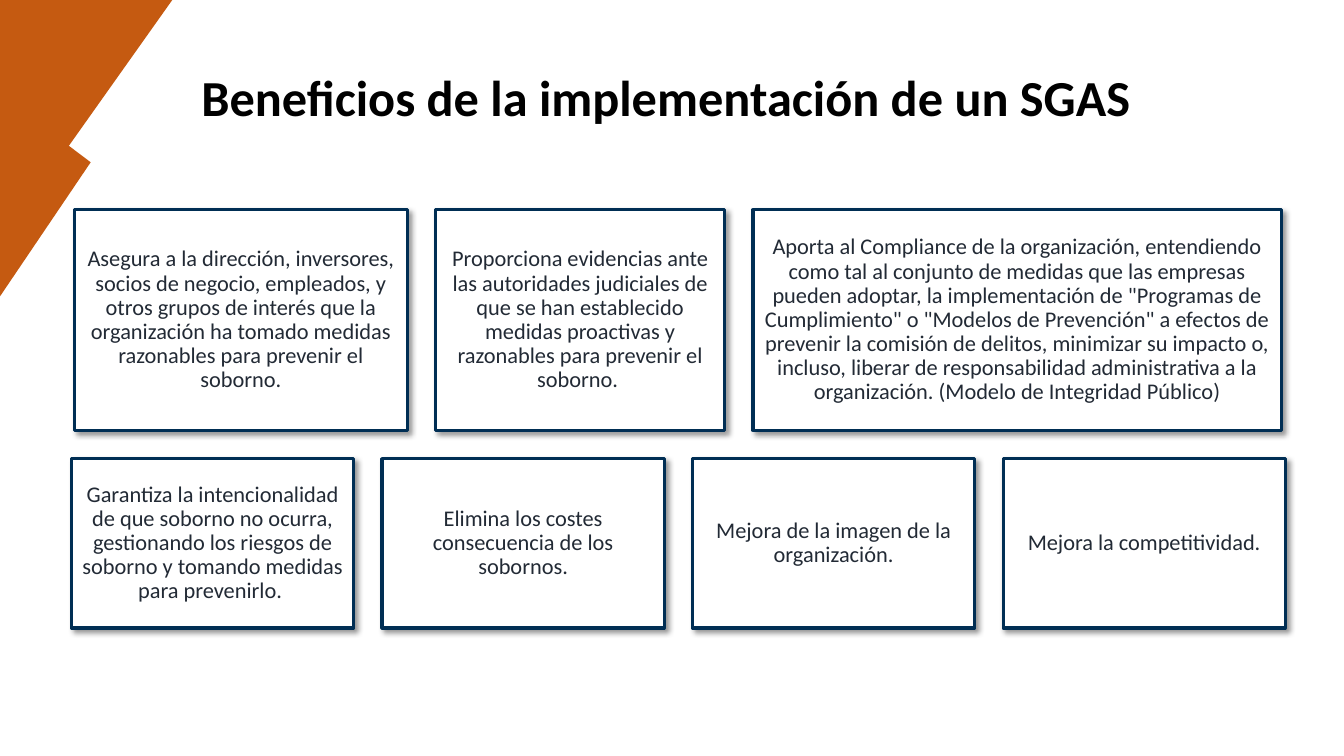
from dataclasses import dataclass

from lxml.etree import SubElement
from pptx import Presentation
from pptx.dml.color import RGBColor
from pptx.enum.shapes import MSO_SHAPE
from pptx.enum.text import MSO_ANCHOR, PP_ALIGN
from pptx.oxml.ns import qn
from pptx.shapes.autoshape import Shape
from pptx.slide import Slide
from pptx.text.text import TextFrame
from pptx.util import Pt

FONT = "Calibri"
ORANGE, NAVY, SLATE = "C55A11", "002E54", "222A35"
WHITE, BLACK = "FFFFFF", "000000"
CARD_GAP = 20.2


@dataclass(frozen=True)
class Card:
    width: float
    text: str


@dataclass(frozen=True)
class CardRow:
    left: float
    top: float
    height: float
    cards: list[Card]


@dataclass(frozen=True)
class Corner:
    points: list[tuple[float, float]]


CORNERS = [
    Corner([(0, 67), (64.8, 115.9), (0, 211.7)]),
    Corner([(35.3, 123.8), (-0.7, 97.9), (-0.7, -0.7), (123.1, 0)]),
]

ROWS = [
    CardRow(53.3, 149.8, 157.7, [
        Card(237.6, "Asegura a la dirección, inversores, socios de negocio, empleados, "
                    "y otros grupos de interés que la organización ha tomado medidas "
                    "razonables para prevenir el soborno."),
        Card(206.6, "Proporciona evidencias ante las autoridades judiciales de que se han "
                    "establecido medidas proactivas y razonables para prevenir el soborno. "),
        Card(377.3, "Aporta al Compliance de la organización, entendiendo como tal al "
                    "conjunto de medidas que las empresas pueden adoptar, la "
                    'implementación de "Programas de Cumplimiento" o "Modelos de '
                    'Prevención" a efectos de prevenir la comisión de delitos, minimizar '
                    "su impacto o, incluso, liberar de responsabilidad administrativa a "
                    "la organización. (Modelo de Integridad Público)"),
    ]),
    CardRow(51.1, 327.6, 121, [
        Card(201.6, text) for text in (
            "Garantiza la intencionalidad de que soborno no ocurra, gestionando los "
            "riesgos de soborno y tomando medidas para prevenirlo. ",
            "Elimina los costes consecuencia de los sobornos.",
            "Mejora de la imagen de la organización.",
            "Mejora la competitividad.",
        )
    ]),
]


def color(value: str) -> RGBColor:
    return RGBColor.from_string(value)


def write_text(frame: TextFrame, text: str, size: float, ink: str, bold: bool = False) -> None:
    frame.word_wrap = True
    frame.vertical_anchor = MSO_ANCHOR.MIDDLE
    paragraph = frame.paragraphs[0]
    paragraph.alignment = PP_ALIGN.CENTER
    paragraph.line_spacing = 0.9
    run = paragraph.add_run()
    run.text = text
    run.font.name = FONT
    run.font.size = Pt(size)
    run.font.bold = bold
    run.font.color.rgb = color(ink)


def add_shadow(shape: Shape) -> None:
    shape.shadow.inherit = False
    effects = shape._element.spPr.find(qn("a:effectLst"))
    shadow = SubElement(effects, qn("a:outerShdw"), blurRad=str(Pt(4)), dist=str(Pt(3)),
                        dir="2700000", algn="tl", rotWithShape="0")
    tint = SubElement(shadow, qn("a:srgbClr"), val=BLACK)
    SubElement(tint, qn("a:alpha"), val="40000")


def draw_corner(slide: Slide, corner: Corner) -> None:
    points = [(Pt(x), Pt(y)) for x, y in corner.points]
    builder = slide.shapes.build_freeform(*points[0])
    builder.add_line_segments(points[1:], close=True)
    shape = builder.convert_to_shape()
    shape.shadow.inherit = False
    shape.fill.solid()
    shape.fill.fore_color.rgb = color(ORANGE)
    shape.line.fill.background()


def draw_card(slide: Slide, card: Card, left: float, top: float, height: float) -> None:
    shape = slide.shapes.add_shape(MSO_SHAPE.RECTANGLE, Pt(left), Pt(top),
                                   Pt(card.width), Pt(height))
    shape.fill.solid()
    shape.fill.fore_color.rgb = color(WHITE)
    shape.line.color.rgb = color(NAVY)
    shape.line.width = Pt(2.25)
    add_shadow(shape)
    frame = shape.text_frame
    frame.margin_left = frame.margin_right = Pt(4.8)
    frame.margin_top = frame.margin_bottom = Pt(4.8)
    write_text(frame, card.text, 16, SLATE)


def draw_row(slide: Slide, row: CardRow) -> None:
    left = row.left
    for card in row.cards:
        draw_card(slide, card, left, row.top, row.height)
        left += card.width + CARD_GAP


def draw_title(slide: Slide, text: str) -> None:
    title = slide.shapes.title
    title.left, title.top = Pt(-0.7), Pt(19.4)
    title.width, title.height = Pt(961.2), Pt(104.4)
    write_text(title.text_frame, text, 36, BLACK, bold=True)


def main() -> None:
    presentation = Presentation()
    presentation.slide_width, presentation.slide_height = Pt(960), Pt(540)
    slide = presentation.slides.add_slide(presentation.slide_layouts[5])
    for corner in CORNERS:
        draw_corner(slide, corner)
    for row in ROWS:
        draw_row(slide, row)
    draw_title(slide, "Beneficios de la implementación de un SGAS ")
    presentation.save("out.pptx")


if __name__ == "__main__":
    main()
